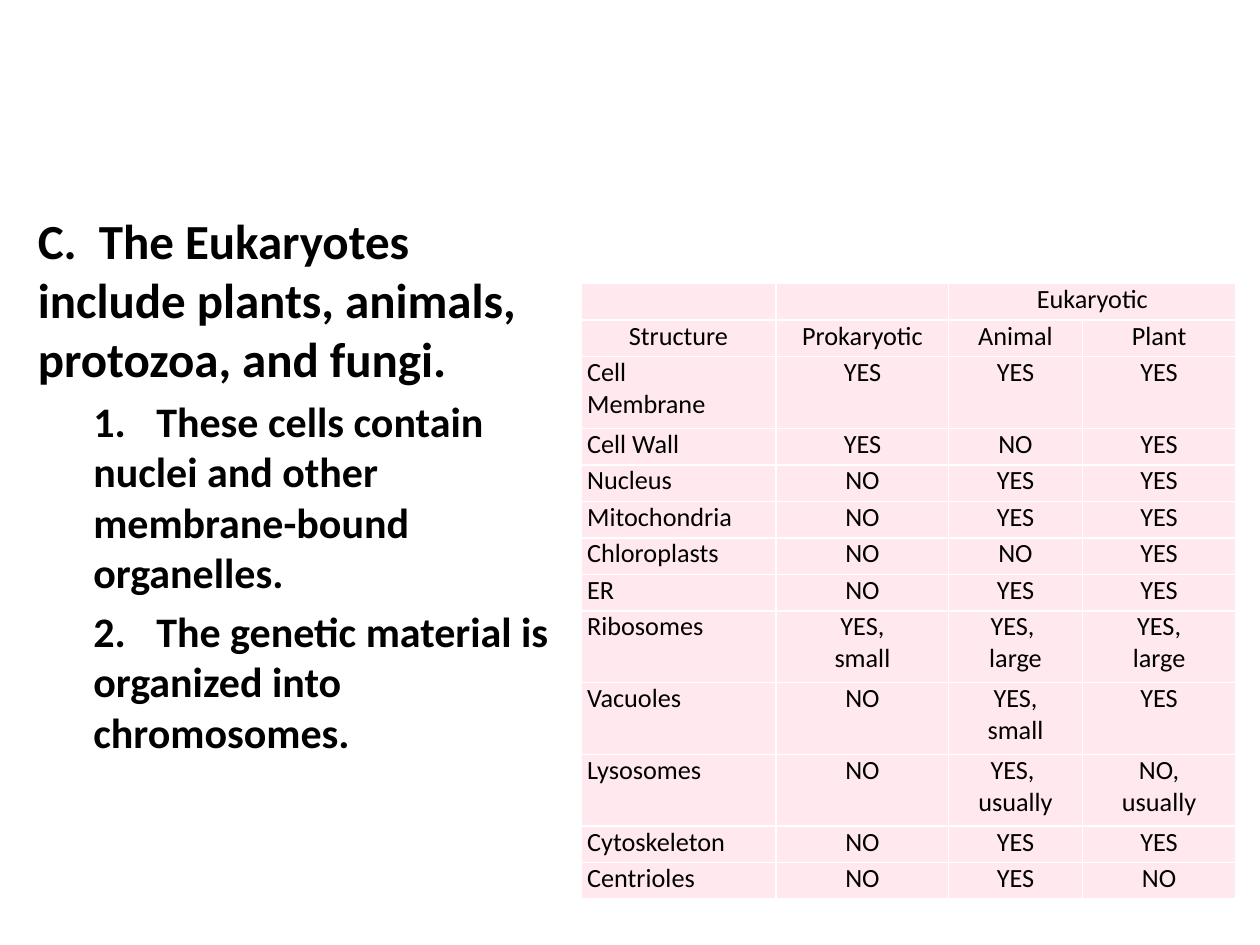
from typing import NamedTuple, Optional

from lxml.etree import SubElement
from pptx import Presentation
from pptx.dml.color import RGBColor
from pptx.enum.text import MSO_AUTO_SIZE, PP_ALIGN as Align
from pptx.oxml.ns import qn
from pptx.util import Inches, Pt

BLACK = RGBColor(0x00, 0x00, 0x00)
WHITE = RGBColor(0xFF, 0xFF, 0xFF)
PINK = RGBColor(0xFF, 0xE8, 0xEE)
FONT = "Calibri"
CELL_SIZE = 15


class OutlineItem(NamedTuple):
    text: str
    level: int
    size: int
    margin: float


class Structure(NamedTuple):
    name: str
    prokaryotic: str
    animal: str
    plant: str


OUTLINE = [
    OutlineItem("C.  The Eukaryotes include plants, animals, protozoa, and fungi.", 0, 28, 0),
    OutlineItem("1.\tThese cells contain nuclei and other membrane-bound organelles.", 1, 24, 0.44),
    OutlineItem("2.\tThe genetic material is organized into chromosomes.", 1, 24, 0.44),
]

HEADER_ROWS = 2
STRUCTURES = [
    Structure("", "", "Eukaryotic", ""),
    Structure("Structure", "Prokaryotic", "Animal", "Plant"),
    Structure("Cell\nMembrane", "YES", "YES", "YES"),
    Structure("Cell Wall", "YES", "NO", "YES"),
    Structure("Nucleus", "NO", "YES", "YES"),
    Structure("Mitochondria", "NO", "YES", "YES"),
    Structure("Chloroplasts", "NO", "NO", "YES"),
    Structure("ER", "NO", "YES", "YES"),
    Structure("Ribosomes", "YES,\nsmall", "YES, \nlarge", "YES,\nlarge"),
    Structure("Vacuoles", "NO", "YES,\nsmall", "YES"),
    Structure("Lysosomes", "NO", "YES, \nusually", "NO,\nusually"),
    Structure("Cytoskeleton", "NO", "YES", "YES"),
    Structure("Centrioles", "NO", "YES", "NO"),
]
COLUMN_WIDTHS = [1.55, 1.37, 1.06, 1.22]
SINGLE_ROW, DOUBLE_ROW = 0.29, 0.57


def write_paragraph(paragraph, text: str, *, size: int, bold: bool = False, level: int = 0,
                    margin: float = 0, indent: float = 0,
                    align: Optional[Align] = None) -> None:
    """Fill a paragraph with unbulleted text; an empty one keeps the text size."""
    paragraph.level = level
    paragraph.alignment = align
    properties = paragraph._p.get_or_add_pPr()
    properties.set("marL", str(Inches(margin)))
    properties.set("indent", str(Inches(indent)))
    SubElement(properties, qn("a:buNone"))
    if not text:
        SubElement(paragraph._p, qn("a:endParaRPr")).set("sz", str(size * 100))
        return
    run = paragraph.add_run()
    run.text = text
    run.font.name = FONT
    run.font.size = Pt(size)
    run.font.bold = bold
    run.font.color.rgb = BLACK


def set_borders(cell, color: RGBColor, width: float) -> None:
    properties = cell._tc.get_or_add_tcPr()
    for side in ("lnL", "lnR", "lnT", "lnB"):
        line = SubElement(properties, qn(f"a:{side}"), w=str(Pt(width)))
        fill = SubElement(line, qn("a:solidFill"))
        SubElement(fill, qn("a:srgbClr"), val=str(color))


def fill_cell(cell, text: str, align: Align) -> None:
    set_borders(cell, WHITE, 1)
    cell.fill.solid()
    cell.fill.fore_color.rgb = PINK
    cell.margin_left = cell.margin_right = Inches(0.05)
    cell.margin_top = cell.margin_bottom = 0
    frame = cell.text_frame
    for index, line in enumerate(text.split("\n")):
        paragraph = frame.add_paragraph() if index else frame.paragraphs[0]
        write_paragraph(paragraph, line, size=CELL_SIZE, margin=0.5, indent=-0.5, align=align)


def add_outline(body) -> None:
    body.left, body.top = Inches(0.2), Inches(1.62)
    body.width, body.height = Inches(4.33), Inches(4.95)
    frame = body.text_frame
    frame.auto_size = MSO_AUTO_SIZE.NONE
    for index, item in enumerate(OUTLINE):
        paragraph = frame.add_paragraph() if index else frame.paragraphs[0]
        write_paragraph(paragraph, item.text, size=item.size, bold=True,
                        level=item.level, margin=item.margin)


def add_structure_table(slide) -> None:
    heights = [DOUBLE_ROW if any("\n" in text for text in row) else SINGLE_ROW
               for row in STRUCTURES]
    table = slide.shapes.add_table(
        len(heights), len(COLUMN_WIDTHS), Inches(4.61), Inches(2.25),
        Inches(sum(COLUMN_WIDTHS)), Inches(sum(heights))).table
    table.first_row = table.horz_banding = False
    for column, width in zip(table.columns, COLUMN_WIDTHS):
        column.width = Inches(width)
    for row_index, (structure, height) in enumerate(zip(STRUCTURES, heights)):
        table.rows[row_index].height = Inches(height)
        for column_index, text in enumerate(structure):
            is_name = column_index == 0 and row_index >= HEADER_ROWS
            fill_cell(table.cell(row_index, column_index), text,
                      Align.LEFT if is_name else Align.CENTER)
    # "Eukaryotic" heads both the animal and the plant column
    table.cell(0, 2).merge(table.cell(0, 3))


def main() -> None:
    presentation = Presentation()
    presentation.slide_width, presentation.slide_height = Inches(10), Inches(7.5)
    slide = presentation.slides.add_slide(presentation.slide_layouts[1])

    # The slide has no title
    title = slide.shapes.title._element
    title.getparent().remove(title)

    add_outline(slide.placeholders[1])
    add_structure_table(slide)
    presentation.save("out.pptx")


if __name__ == "__main__":
    main()
